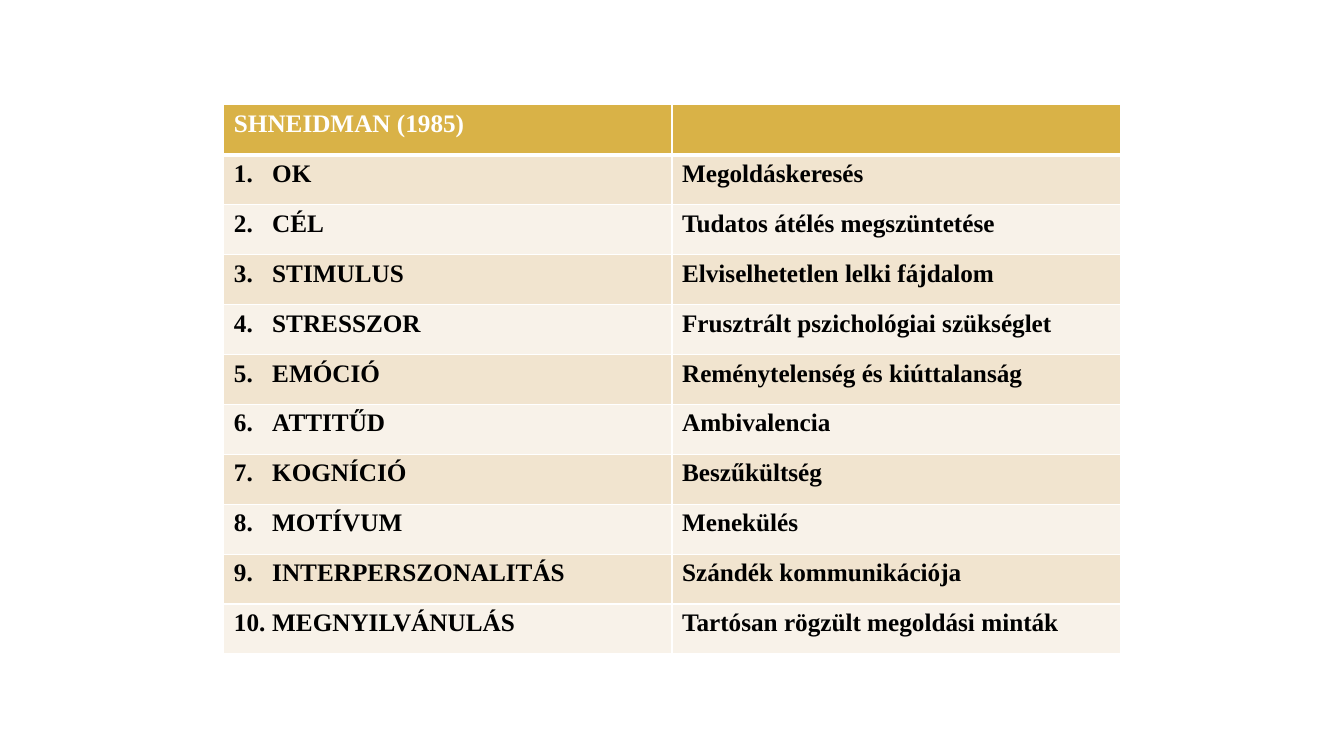
from dataclasses import dataclass

from lxml import etree
from pptx import Presentation
from pptx.dml.color import RGBColor
from pptx.oxml import ns
from pptx.util import Inches, Pt

HEADINGS = ("SHNEIDMAN (1985)", "")
TRAITS = [
    ("OK", "Megoldáskeresés"),
    ("CÉL", "Tudatos átélés megszüntetése"),
    ("STIMULUS", "Elviselhetetlen lelki fájdalom"),
    ("STRESSZOR", "Frusztrált pszichológiai szükséglet"),
    ("EMÓCIÓ", "Reménytelenség és kiúttalanság"),
    ("ATTITŰD", "Ambivalencia"),
    ("KOGNÍCIÓ", "Beszűkültség"),
    ("MOTÍVUM", "Menekülés"),
    ("INTERPERSZONALITÁS", "Szándék kommunikációja"),
    ("MEGNYILVÁNULÁS", "Tartósan rögzült megoldási minták"),
]


@dataclass(frozen=True)
class Theme:
    font: str = "Times New Roman"
    size: int = 18
    heading_text: str = "FFFFFF"
    body_text: str = "000000"
    heading_fill: str = "D9B247"
    bands: tuple = ("F8F2E9", "F1E4CF")
    border: str = "FFFFFF"
    thin: int = 1
    thick: int = 3


THEME = Theme()


def add_borders(cell, top, bottom):
    properties = cell._tc.get_or_add_tcPr()
    widths = {"lnL": THEME.thin, "lnR": THEME.thin, "lnT": top, "lnB": bottom}
    for place, (side, width) in enumerate(widths.items()):
        line = etree.Element(ns.qn(f"a:{side}"), w=str(Pt(width)))
        fill = etree.SubElement(line, ns.qn("a:solidFill"))
        etree.SubElement(fill, ns.qn("a:srgbClr"), val=THEME.border)
        properties.insert(place, line)


def number_paragraph(paragraph, number):
    properties = paragraph._p.get_or_add_pPr()
    hanging = Inches(0.38)
    properties.set("marL", str(hanging))
    properties.set("indent", str(-hanging))
    etree.SubElement(properties, ns.qn("a:buFont"), typeface=THEME.font)
    etree.SubElement(properties, ns.qn("a:buAutoNum"),
                     type="arabicPeriod", startAt=str(number))


def write(paragraph, words, color):
    paragraph.font.size = Pt(THEME.size)
    if not words:
        return
    run = paragraph.add_run()
    run.text = words
    run.font.name = THEME.font
    run.font.size = Pt(THEME.size)
    run.font.bold = True
    run.font.color.rgb = RGBColor.from_string(color)


def main():
    deck = Presentation()
    deck.slide_width, deck.slide_height = Inches(13.33), Inches(7.5)
    slide = deck.slides.add_slide(deck.slide_layouts[6])

    entries = [HEADINGS, *TRAITS]
    traits = slide.shapes.add_table(
        len(entries), len(HEADINGS),
        Inches(2.22), Inches(1.04), Inches(8.89), Inches(5.45)).table

    for number, entry in enumerate(entries):
        heading = number == 0
        fill = THEME.heading_fill if heading else THEME.bands[number % 2]
        color = THEME.heading_text if heading else THEME.body_text
        top = THEME.thick if number == 1 else THEME.thin
        bottom = THEME.thick if heading else THEME.thin
        for column, words in enumerate(entry):
            cell = traits.cell(number, column)
            cell.fill.solid()
            cell.fill.fore_color.rgb = RGBColor.from_string(fill)
            add_borders(cell, top, bottom)
            paragraph = cell.text_frame.paragraphs[0]
            if column == 0 and not heading:
                number_paragraph(paragraph, number)
            write(paragraph, words, color)

    deck.save("out.pptx")


if __name__ == "__main__":
    main()
